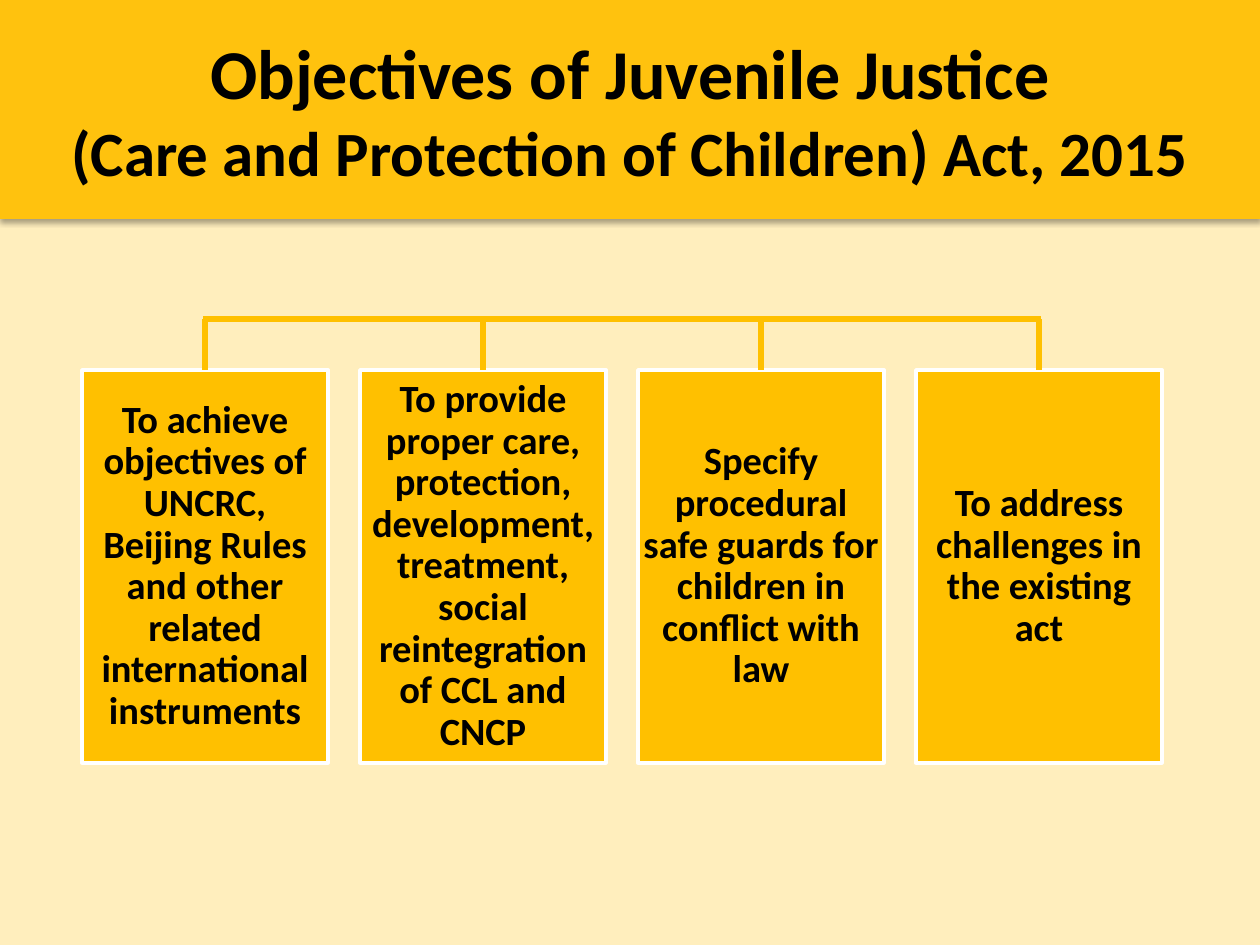
from lxml import etree
from pptx import Presentation
from pptx import util as u
from pptx.dml.color import RGBColor
from pptx.enum import shapes, text
from pptx.oxml import ns

# Content
TITLE = [("Objectives of Juvenile Justice", "title"),
         ("(Care and Protection of Children) Act, 2015", "subtitle")]
OBJECTIVES = [
    "To achieve objectives of UNCRC, Beijing Rules and other related international instruments",
    "To provide proper care, protection, development, treatment, social reintegration of CCL and CNCP",
    "Specify procedural safe guards for children in conflict with law",
    "To address challenges in the existing act",
]

# Theme
THEME = {
    "font": "Calibri",
    "color": {"page": "FFEEBD", "band": "FFC20E", "box": "FFC000",
              "edge": "FFFFFF", "text": "000000"},
    "size": {"title": 40, "subtitle": 36, "box": 22},
    "line": {"edge": 2, "branch": 3},
}

# Layout in px
WIDTH, HEIGHT = 1260, 945
BAND_H = 219
TITLE_BOX = (0, 23, WIDTH, 158)
BOX_X, BOX_Y, BOX_W, BOX_H, PITCH = 82, 370, 246, 393, 278
BUS_Y, BUS_OVERHANG = 319, 2
INSET = 5


def px(n):
    return u.Emu(round(n * 914400 / 126))


def color(name):
    return RGBColor.from_string(THEME["color"][name])


def set_all(obj, values):
    for name, value in values.items():
        setattr(obj, name, value)


def add_run(p, words, size):
    r = p.add_run()
    r.text = words
    set_all(r.font, {"name": THEME["font"], "size": u.Pt(THEME["size"][size]), "bold": True})
    r.font.color.rgb = color("text")


def add_rect(x, y, w, h, fill):
    sp = s.shapes.add_shape(shapes.MSO_SHAPE.RECTANGLE, px(x), px(y), px(w), px(h))
    sp.shadow.inherit = False
    sp.fill.solid()
    sp.fill.fore_color.rgb = color(fill)
    sp.line.fill.background()
    return sp


def add_branch(x1, y1, x2, y2):
    line = s.shapes.add_connector(shapes.MSO_CONNECTOR.STRAIGHT, px(x1), px(y1), px(x2), px(y2))
    line.line.color.rgb = color("box")
    line.line.width = u.Pt(THEME["line"]["branch"])
    etree.SubElement(line._element.spPr, ns.qn("a:effectLst"))
    return line


def add_drop_shadow(sp, blur, dist, opacity):
    effects = sp._element.spPr.find(ns.qn("a:effectLst"))
    shadow = etree.SubElement(effects, ns.qn("a:outerShdw"), blurRad=str(u.Pt(blur)),
                              dist=str(u.Pt(dist)), dir="5400000", rotWithShape="0")
    tint = etree.SubElement(shadow, ns.qn("a:srgbClr"), val=THEME["color"]["text"])
    etree.SubElement(tint, ns.qn("a:alpha"), val=str(opacity * 1000))


prs = Presentation()
prs.slide_width, prs.slide_height = px(WIDTH), px(HEIGHT)
s = prs.slides.add_slide(prs.slide_layouts[6])
s.background.fill.solid()
s.background.fill.fore_color.rgb = color("page")

# Title band
band = add_rect(0, 0, WIDTH, BAND_H, "band")
add_drop_shadow(band, blur=3.1, dist=1.8, opacity=35)
tf = s.shapes.add_textbox(*map(px, TITLE_BOX)).text_frame
tf.word_wrap = True
p = tf.paragraphs[0]
p.alignment = text.PP_ALIGN.CENTER
for i, (words, size) in enumerate(TITLE):
    if i:
        p.add_line_break()
    add_run(p, words, size)

# Objective boxes
boxes = []
for i, words in enumerate(OBJECTIVES):
    sp = add_rect(BOX_X + i * PITCH, BOX_Y, BOX_W, BOX_H, "box")
    sp.line.color.rgb = color("edge")
    sp.line.width = u.Pt(THEME["line"]["edge"])
    tf = sp.text_frame
    set_all(tf, {"word_wrap": True, "vertical_anchor": text.MSO_ANCHOR.MIDDLE})
    set_all(tf, {f"margin_{side}": px(INSET) for side in ("left", "top", "right", "bottom")})
    p = tf.paragraphs[0]
    set_all(p, {"alignment": text.PP_ALIGN.CENTER, "line_spacing": 0.9})
    add_run(p, words, "box")
    boxes.append(sp)

# Branches from the bus to each box
centers = [BOX_X + BOX_W // 2 + i * PITCH for i in range(len(boxes))]
for x, box in zip(centers, boxes):
    add_branch(x, BOX_Y, x, BUS_Y).begin_connect(box, 0)
add_branch(centers[0] - BUS_OVERHANG, BUS_Y, centers[-1] + BUS_OVERHANG, BUS_Y)

prs.save("out.pptx")
